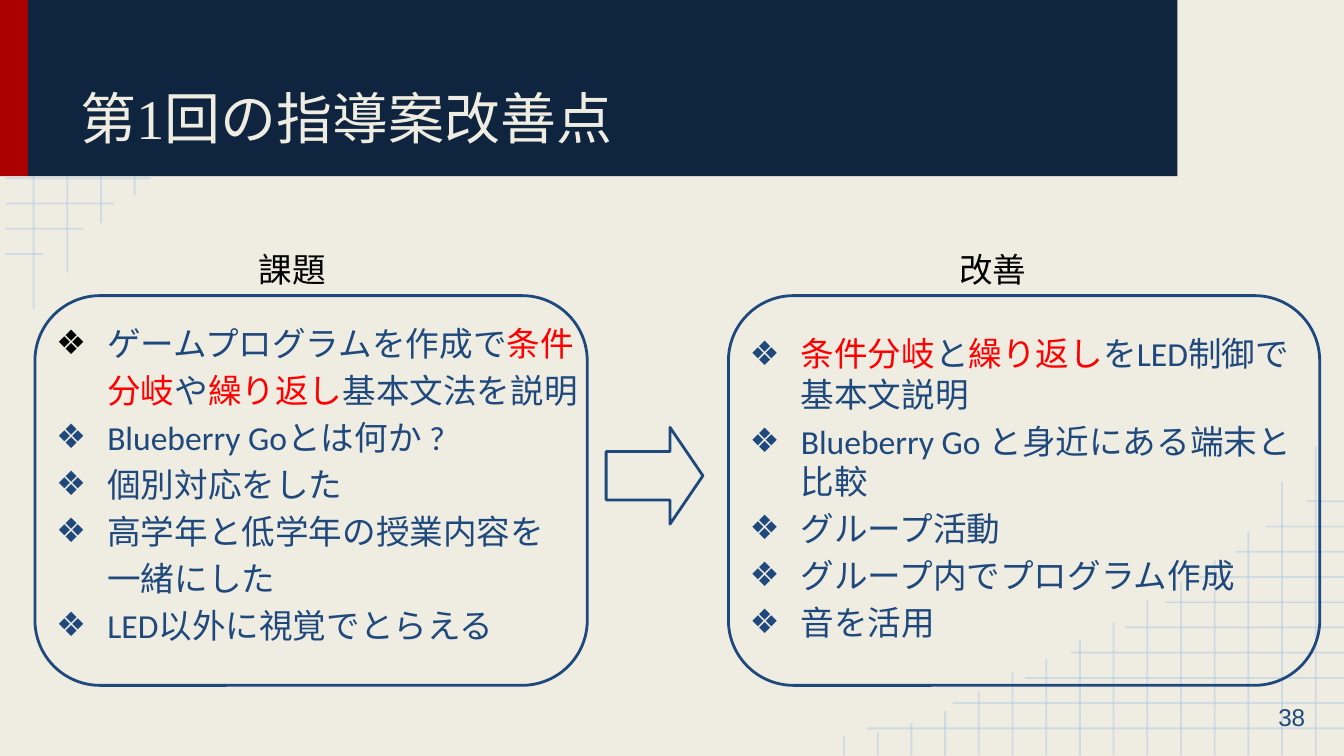
import dataclasses

import lxml.etree
import pptx
import pptx.dml.color
import pptx.enum.shapes
import pptx.enum.text
import pptx.oxml.ns
import pptx.util

Inches = pptx.util.Inches
Pt = pptx.util.Pt
SHAPE = pptx.enum.shapes.MSO_SHAPE
ALIGN = pptx.enum.text.PP_ALIGN
ANCHOR = pptx.enum.text.MSO_ANCHOR


@dataclasses.dataclass(frozen=True)
class Theme:
    paper: str = "EFEDE2"
    navy: str = "0F243E"
    crimson: str = "AB0101"
    blue: str = "1F497D"
    red: str = "FF0000"
    black: str = "000000"
    grid: str = "B7CCE4"
    title_size: float = 30
    body_size: float = 18
    number_size: float = 13
    outline: float = 1.5
    grid_width: float = 1
    grid_alpha: int = 54000


THEME = Theme()
GRID_ROW_ENDS = [3.59, 2.95, 2.41, 2.07, 1.67, 1.37, 1.12, 0.85, 0.62, 0.32]
GRID_COLUMN_ENDS = [2.3, 2.03, 1.66, 1.45, 1.29, 1.16, 0.99, 0.86,
                    0.72, 0.62, 0.48, 0.33, 0.24, 0.17, 0.14]
ISSUES = [
    ("ゲームプログラムを作成で*条件*", THEME.black),
    ("*分岐*や*繰り返し*基本文法を説明", None),
    ("Blueberry Goとは何か ?", THEME.blue),
    ("個別対応をした", THEME.blue),
    ("高学年と低学年の授業内容を", THEME.blue),
    ("一緒にした", None),
    ("LED以外に視覚でとらえる", THEME.blue),
]
IMPROVEMENTS = [
    ("*条件分岐*と*繰り返し*をLED制御で基本文説明", THEME.blue),
    ("Blueberry Go と身近にある端末と比較", THEME.blue),
    ("グループ活動", THEME.blue),
    ("グループ内でプログラム作成", THEME.blue),
    ("音を活用", THEME.blue),
]


def rgb(value):
    return pptx.dml.color.RGBColor.from_string(value)


def child(parent, tag, **attrs):
    return lxml.etree.SubElement(parent, pptx.oxml.ns.qn(tag), attrs)


def add_run(p, text, *, font="Calibri", size=THEME.body_size, color=THEME.blue):
    r = p.add_run()
    r.text = text
    r.font.name = font
    r.font.size = Pt(size)
    r.font.color.rgb = rgb(color)
    child(r.font._element, "a:ea", typeface=font)


class SlideBuilder:
    def __init__(self, prs, theme):
        self.theme = theme
        self.s = prs.slides.add_slide(prs.slide_layouts[6])
        self.s.background.fill.solid()
        self.s.background.fill.fore_color.rgb = rgb(theme.paper)

    def grid_line(self, x1, y1, x2, y2):
        line = self.s.shapes.add_connector(
            pptx.enum.shapes.MSO_CONNECTOR.STRAIGHT,
            Inches(x1), Inches(y1), Inches(x2), Inches(y2))
        line.line.width = Pt(self.theme.grid_width)
        line.line.color.rgb = rgb(self.theme.grid)
        color = line._element.spPr.find(".//" + pptx.oxml.ns.qn("a:srgbClr"))
        child(color, "a:alpha", val=str(self.theme.grid_alpha))
        child(line._element.spPr, "a:effectLst")

    def corner_grid(self, place):
        for i, end in enumerate(GRID_ROW_ENDS):
            y = 0.2 + i * 1.69 / 9
            self.grid_line(*place(0.04, y), *place(end, y))
        for i, end in enumerate(GRID_COLUMN_ENDS):
            x = 0.25 + i * 3.51 / 14
            self.grid_line(*place(x, end), *place(x, 0))

    def shape(self, kind, x, y, w, h, *, fill=None, adjustments=()):
        sp = self.s.shapes.add_shape(kind, Inches(x), Inches(y), Inches(w), Inches(h))
        sp.shadow.inherit = False
        for i, value in enumerate(adjustments):
            sp.adjustments[i] = value
        if fill:
            sp.fill.solid()
            sp.fill.fore_color.rgb = rgb(fill)
            sp.line.fill.background()
        else:
            sp.fill.background()
            sp.line.color.rgb = rgb(self.theme.blue)
            sp.line.width = Pt(self.theme.outline)

    def text_frame(self, x, y, w, h, anchor=ANCHOR.TOP):
        tf = self.s.shapes.add_textbox(
            Inches(x), Inches(y), Inches(w), Inches(h)).text_frame
        tf.word_wrap = True
        tf.vertical_anchor = anchor
        tf.margin_left = tf.margin_right = Inches(0.1)
        tf.margin_top = tf.margin_bottom = Inches(0.1)
        return tf

    def label(self, x, y, w, h, runs, *, align=ALIGN.LEFT, anchor=ANCHOR.TOP, **style):
        p = self.text_frame(x, y, w, h, anchor).paragraphs[0]
        p.alignment = align
        for text, font in runs:
            add_run(p, text, font=font, **style)

    def bullets(self, x, y, w, h, items):
        tf = self.text_frame(x, y, w, h)
        for i, (text, bullet) in enumerate(items):
            p = tf.add_paragraph() if i else tf.paragraphs[0]
            p.space_before = Pt(3.6)
            margin, indent = (0.5, -0.38) if bullet else (0, 0.5)
            pPr = p._p.get_or_add_pPr()
            pPr.set("marL", str(Inches(margin)))
            pPr.set("indent", str(Inches(indent)))
            if bullet:
                child(child(pPr, "a:buClr"), "a:srgbClr", val=bullet)
                child(pPr, "a:buFont", typeface="Arial")
                child(pPr, "a:buChar", char="❖")
            else:
                child(pPr, "a:buNone")
            for j, part in enumerate(text.split("*")):
                if part:
                    add_run(p, part, color=self.theme.red if j % 2 else self.theme.blue)


def main():
    prs = pptx.Presentation()
    prs.slide_width = Inches(10)
    prs.slide_height = prs.slide_width * 9 // 16
    b = SlideBuilder(prs, THEME)

    b.corner_grid(lambda x, y: (x, y))
    b.corner_grid(lambda x, y: (10.04 - x, 5.62 - y))
    b.shape(SHAPE.RECTANGLE, 0, -0.01, 0.21, 1.32, fill=THEME.crimson)
    b.shape(SHAPE.RECTANGLE, 0.21, -0.01, 8.55, 1.32, fill=THEME.navy)
    b.label(0.5, 0.11, 8, 1.11,
            [("第", "Calibri"), ("1", "Times New Roman"), ("回の指導案改善点", "Calibri")],
            anchor=ANCHOR.BOTTOM, size=THEME.title_size, color=THEME.paper)
    b.label(9.21, 5.05, 0.6, 0.57, [("38", "Arial")], align=ALIGN.RIGHT,
            anchor=ANCHOR.MIDDLE, size=THEME.number_size)

    b.bullets(0.2, 2.3, 4.3, 2.75, ISSUES)
    b.shape(SHAPE.ROUNDED_RECTANGLE, 0.26, 2.2, 4.11, 2.9, adjustments=[0.167])
    b.label(1.14, 1.75, 2.07, 0.37, [("課題", "Lato")],
            align=ALIGN.CENTER, color=THEME.black)
    b.shape(SHAPE.RIGHT_ARROW, 4.51, 3.18, 0.72, 0.72, adjustments=[0.5, 0.34])
    b.shape(SHAPE.ROUNDED_RECTANGLE, 5.42, 2.2, 4.4, 2.9, adjustments=[0.167])
    b.label(7.04, 1.75, 1.37, 0.37, [("改善", "Lato")], color=THEME.black)
    b.bullets(5.36, 2.38, 4.51, 2.9, IMPROVEMENTS)

    prs.save("out.pptx")


if __name__ == "__main__":
    main()
